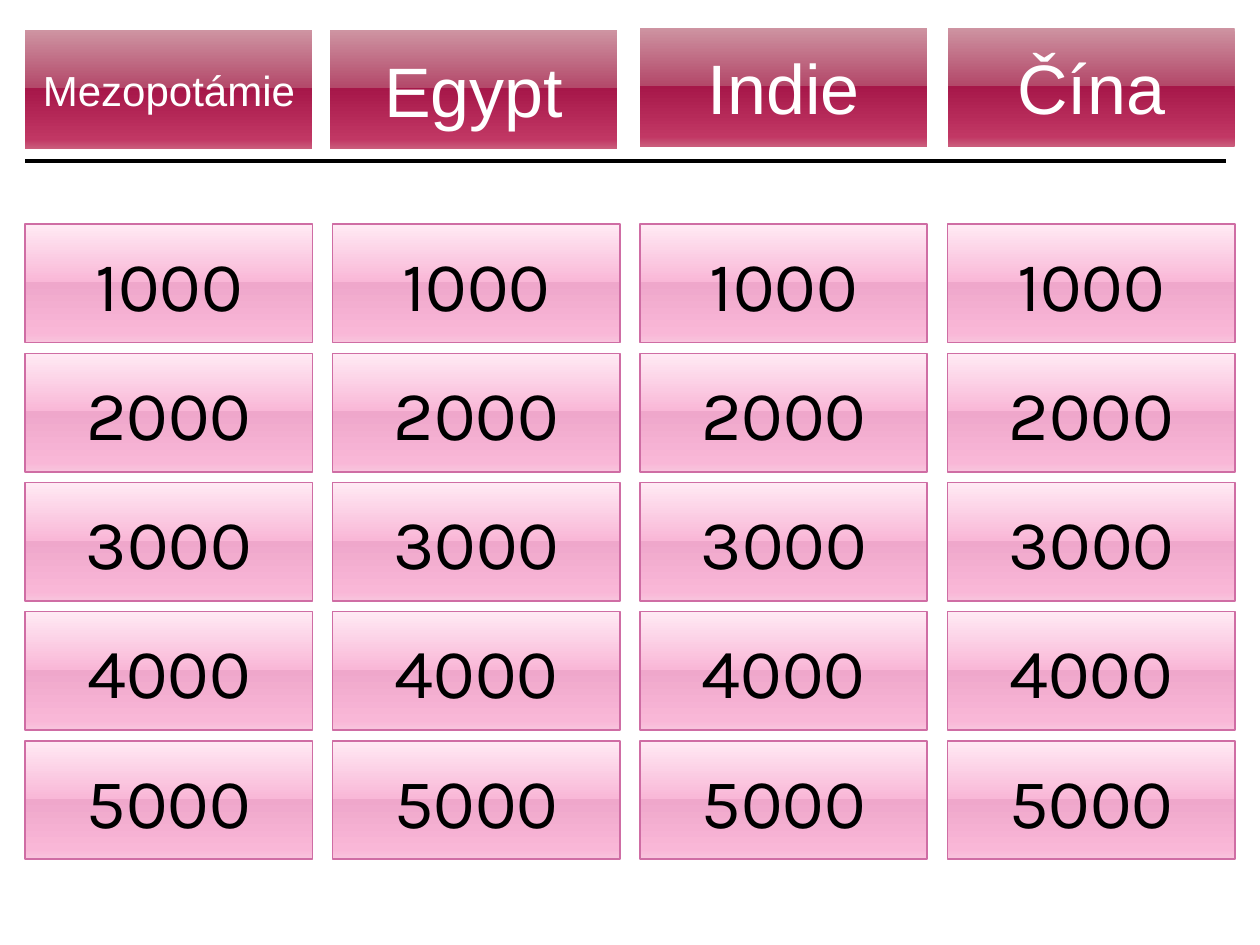
from lxml import etree
from pptx import Presentation
from pptx.dml.color import RGBColor
from pptx.enum.shapes import MSO_CONNECTOR, MSO_SHAPE
from pptx.enum.text import MSO_ANCHOR, PP_ALIGN
from pptx.oxml.ns import qn
from pptx.util import Inches, Pt

RECTANGLE = MSO_SHAPE.RECTANGLE
STRAIGHT = MSO_CONNECTOR.STRAIGHT
MIDDLE = MSO_ANCHOR.MIDDLE
CENTER = PP_ALIGN.CENTER

# Category name, left, top, text size
CATEGORIES = [
    ("Mezopotámie", 0.2, 0.24, 24),
    ("Egypt", 2.62, 0.24, 40),
    ("Indie", 5.08, 0.22, 40),
    ("Čína", 7.52, 0.22, 40),
]
POINTS = ["1000", "2000", "3000", "4000", "5000"]

COLORS = {"header_text": "FFFFFF", "tile_text": "000000",
          "tile_line": "CF6DA4", "rule": "000000"}
STOP_POSITIONS = [0, 49, 49, 92, 100]
GRADIENTS = {
    "header": ["CE94A2", "B34869", "A61749", "C13764", "CA5D7C"],
    "tile": ["FFEAF4", "F9B7D7", "EFA7CB", "F9B7D7", "F8C4DD"],
}

CARD_WIDTH, CARD_HEIGHT = 2.28, 0.94
GRID_LEFT, GRID_TOP = 0.2, 1.78
COLUMN_STEP, ROW_STEP = 2.44, 1.025
RULE_LEFT, RULE_RIGHT, RULE_TOP = 0.2, 9.73, 1.28


def fill_gradient(shape, colors):
    """Fill from top to bottom with one colour per stop position."""
    shape.fill.gradient()
    shape.fill.gradient_angle = 270
    stops = shape.element.spPr.find(qn("a:gradFill")).find(qn("a:gsLst"))
    for stop in list(stops):
        stops.remove(stop)
    for position, color in zip(STOP_POSITIONS, colors):
        stop = etree.SubElement(stops, qn("a:gs"), pos=str(position * 1000))
        etree.SubElement(stop, qn("a:srgbClr"), val=color)


def add_card(slide, text, left, top, kind, font_name, size):
    shape = slide.shapes.add_shape(
        RECTANGLE, Inches(left), Inches(top),
        Inches(CARD_WIDTH), Inches(CARD_HEIGHT))
    shape.shadow.inherit = False
    fill_gradient(shape, GRADIENTS[kind])
    shape.line.fill.background()
    shape.text_frame.word_wrap = True
    shape.text_frame.vertical_anchor = MIDDLE
    paragraph = shape.text_frame.paragraphs[0]
    paragraph.alignment = CENTER
    run = paragraph.add_run()
    run.text = text
    font_format = {"name": font_name, "size": Pt(size)}
    for name, value in font_format.items():
        setattr(run.font, name, value)
    run.font.color.rgb = RGBColor.from_string(COLORS[kind + "_text"])
    return shape


def add_rule(slide):
    rule = slide.shapes.add_connector(
        STRAIGHT, Inches(RULE_LEFT), Inches(RULE_TOP),
        Inches(RULE_RIGHT), Inches(RULE_TOP))
    rule.line.color.rgb = RGBColor.from_string(COLORS["rule"])
    rule.line.width = Pt(2.5)
    etree.SubElement(rule.element.spPr, qn("a:effectLst"))


def main():
    presentation = Presentation()
    presentation.slide_width = Inches(10)
    presentation.slide_height = Inches(7.5)
    slide = presentation.slides.add_slide(presentation.slide_layouts[6])

    for name, left, top, size in CATEGORIES:
        add_card(slide, name, left, top, "header", "Arial", size)
    add_rule(slide)

    for column in range(len(CATEGORIES)):
        for row, points in enumerate(POINTS):
            tile = add_card(
                slide, points, GRID_LEFT + column * COLUMN_STEP,
                GRID_TOP + row * ROW_STEP, "tile", "Karla", 40)
            tile.line.color.rgb = RGBColor.from_string(COLORS["tile_line"])
            tile.line.width = Pt(0.9)

    presentation.save("out.pptx")


if __name__ == "__main__":
    main()
